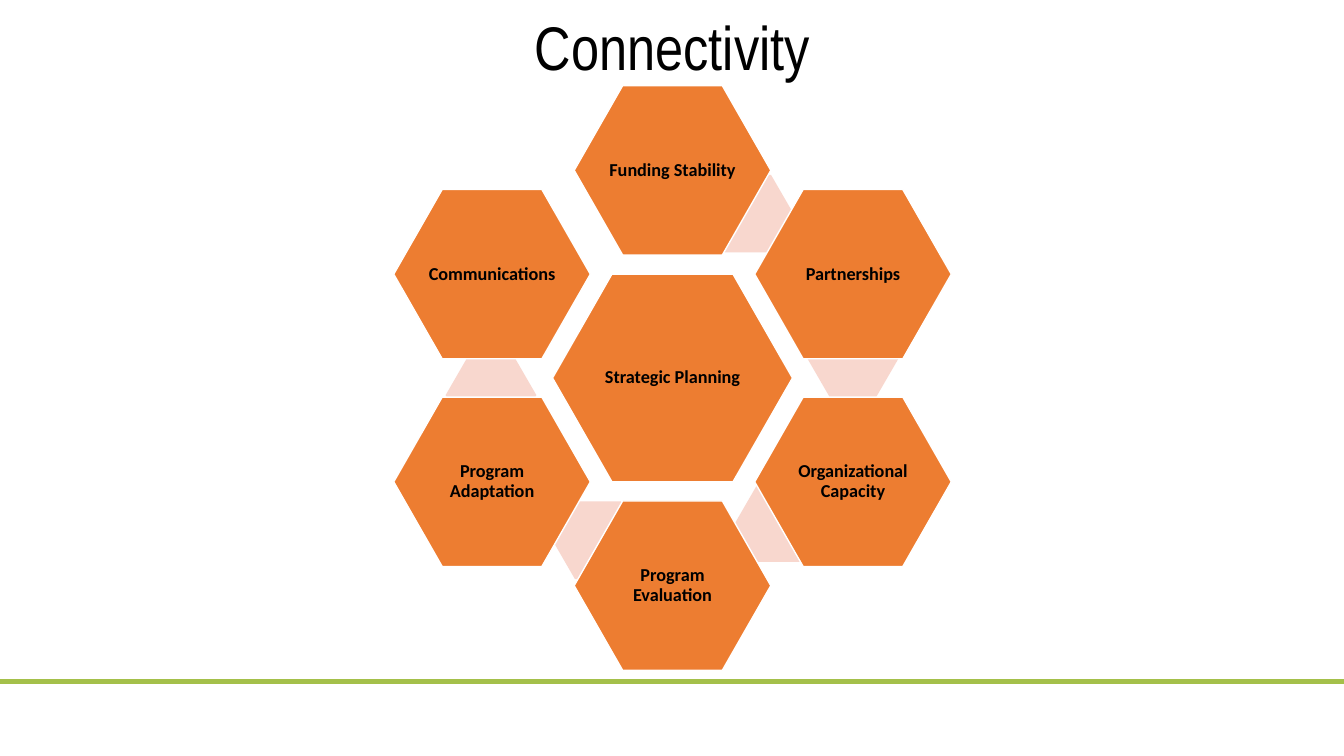
"""Build the Connectivity slide: six linked domains around strategic planning."""
from dataclasses import dataclass

from lxml import etree
from pptx import Presentation
from pptx.dml.color import RGBColor
from pptx.enum.shapes import MSO_CONNECTOR, MSO_SHAPE
from pptx.enum.text import MSO_ANCHOR, PP_ALIGN
from pptx.oxml.ns import qn
from pptx.util import Pt

EMU_PER_PX = 9144
SLIDE_WIDTH, SLIDE_HEIGHT = 1333, 750
HEXAGON = MSO_SHAPE.HEXAGON
STRAIGHT = MSO_CONNECTOR.STRAIGHT
MIDDLE = MSO_ANCHOR.MIDDLE
CENTER = PP_ALIGN.CENTER

ORANGE = RGBColor(0xED, 0x7D, 0x31)
PINK = RGBColor(0xF8, 0xD7, 0xCE)
GREEN = RGBColor(0xA4, 0xC0, 0x4A)
WHITE = RGBColor(0xFF, 0xFF, 0xFF)
BLACK = RGBColor(0x00, 0x00, 0x00)

HUB_X, HUB_Y = 667, 375
HUB_SIZE = (238, 206)
DOMAIN_SIZE = (195, 168)
LINK_SIZE = (90, 77)
COLUMN_STEP, ROW_STEP = 179, 103


@dataclass(frozen=True)
class Domain:
    label: str
    column: int
    row: int


@dataclass(frozen=True)
class Link:
    x: int
    y: int


DOMAINS = [
    Domain("Funding Stability", 0, -2),
    Domain("Partnerships", 1, -1),
    Domain("Organizational Capacity", 1, 1),
    Domain("Program Evaluation", 0, 2),
    Domain("Program Adaptation", -1, 1),
    Domain("Communications", -1, -1),
]
LINKS = [Link(742, 212), Link(846, 356), Link(774, 519), Link(593, 536), Link(487, 392)]


def px(length: float) -> int:
    return round(length * EMU_PER_PX)


def write_text(shape, text: str, font_name: str, size: int, bold: bool) -> None:
    frame = shape.text_frame
    frame.word_wrap = True
    frame.vertical_anchor = MIDDLE
    frame.margin_left = frame.margin_right = frame.margin_top = frame.margin_bottom = 0
    frame.text = text
    paragraph = frame.paragraphs[0]
    paragraph.alignment = CENTER
    paragraph.line_spacing = 0.9
    font = paragraph.runs[0].font
    font.name = font_name
    font.size = Pt(size)
    font.bold = bold
    font.color.rgb = BLACK


def add_hexagon(slide, x: int, y: int, size: tuple[int, int], fill: RGBColor, slant: float):
    width, height = size
    hexagon = slide.shapes.add_shape(
        HEXAGON, px(x - width / 2), px(y - height / 2), px(width), px(height)
    )
    hexagon.adjustments[0] = slant
    hexagon.shadow.inherit = False
    hexagon.fill.solid()
    hexagon.fill.fore_color.rgb = fill
    hexagon.line.fill.background()
    return hexagon


def add_topic(slide, label: str, x: int, y: int, size: tuple[int, int]) -> None:
    topic = add_hexagon(slide, x, y, size, ORANGE, 0.286)
    topic.line.color.rgb = WHITE
    topic.line.width = Pt(1)
    write_text(topic, label, "Calibri", 13, True)


def add_footer_rule(slide) -> None:
    rule = slide.shapes.add_connector(STRAIGHT, 0, px(676), px(SLIDE_WIDTH), px(676))
    rule.line.color.rgb = GREEN
    rule.line.width = Pt(4)
    etree.SubElement(rule._element.spPr, qn("a:effectLst"))


def main() -> None:
    presentation = Presentation()
    presentation.slide_width = px(SLIDE_WIDTH)
    presentation.slide_height = px(SLIDE_HEIGHT)
    slide = presentation.slides.add_slide(presentation.slide_layouts[6])

    add_footer_rule(slide)
    title = slide.shapes.add_textbox(px(92), px(-22), px(1150), px(145))
    write_text(title, "Connectivity", "Arial Narrow", 44, False)

    add_topic(slide, "Strategic Planning", HUB_X, HUB_Y, HUB_SIZE)
    for link in LINKS:
        add_hexagon(slide, link.x, link.y, LINK_SIZE, PINK, 0.289)
    for domain in DOMAINS:
        x = HUB_X + domain.column * COLUMN_STEP
        y = HUB_Y + domain.row * ROW_STEP
        add_topic(slide, domain.label, x, y, DOMAIN_SIZE)

    presentation.save("out.pptx")


if __name__ == "__main__":
    main()
